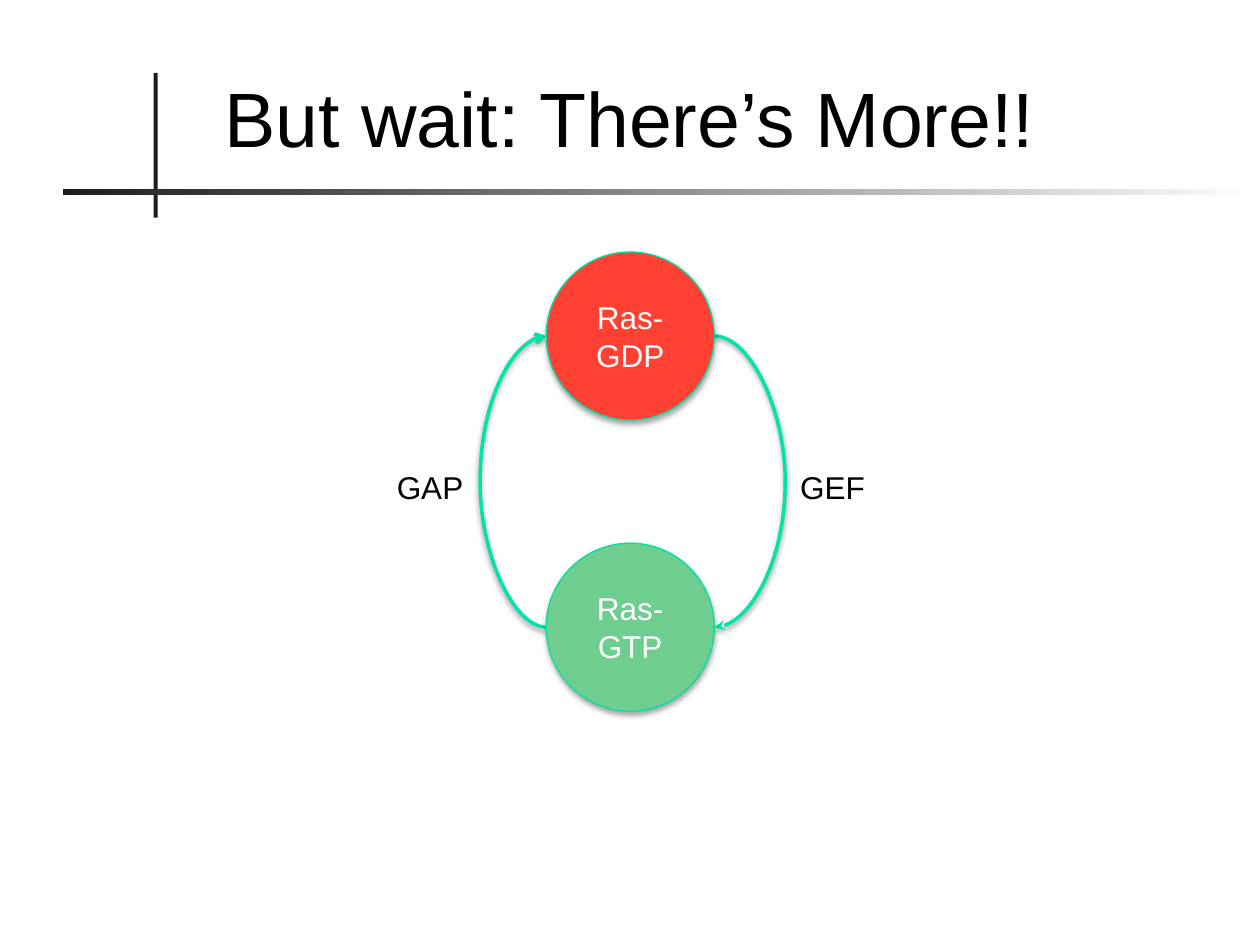
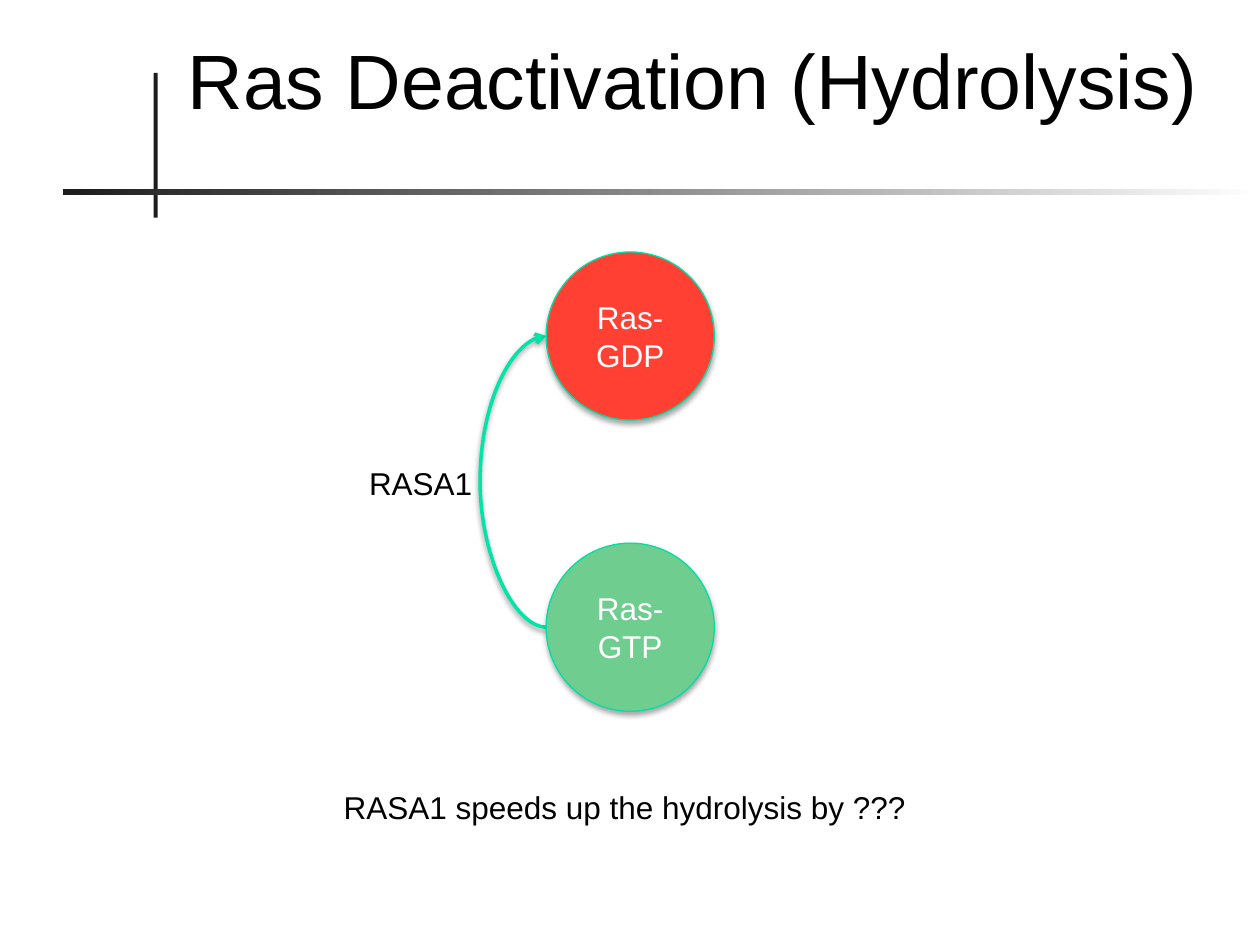
from lxml import etree
from pptx import Presentation
from pptx.dml.color import RGBColor
from pptx.enum.shapes import MSO_CONNECTOR, MSO_SHAPE
from pptx.enum.text import MSO_ANCHOR, PP_ALIGN
from pptx.oxml.ns import qn
from pptx.util import Cm, Pt

CURVE = MSO_CONNECTOR.CURVE
RECTANGLE, OVAL = MSO_SHAPE.RECTANGLE, MSO_SHAPE.OVAL
MIDDLE, TOP = MSO_ANCHOR.MIDDLE, MSO_ANCHOR.TOP
CENTER, LEFT = PP_ALIGN.CENTER, PP_ALIGN.LEFT

THEME = {
    "band": RGBColor.from_string("1C1C1C"),
    "white": RGBColor.from_string("FFFFFF"),
    "black": RGBColor.from_string("000000"),
    "arrow": RGBColor.from_string("00E4A8"),
    "outline": RGBColor.from_string("00DFA4"),
    "inactive": RGBColor.from_string("FF4032"),
    "active": RGBColor.from_string("6ECD8F"),
    "font": "Arial",
    "title_size": Pt(44),
    "body_size": Pt(18),
}

# Format of each kind of text: frame, paragraph, font and colour
TITLE = {"wrap": True, "anchor": MIDDLE, "align": CENTER,
         "size": THEME["title_size"], "color": THEME["black"]}
LABEL = {"wrap": False, "anchor": TOP, "align": LEFT,
         "size": THEME["body_size"], "color": THEME["black"]}
STATE = {"wrap": True, "anchor": MIDDLE, "align": CENTER,
         "size": THEME["body_size"], "color": THEME["white"]}

# Ras cycle geometry in centimetres
DIAMETER = 3.39
CIRCLE_LEFT = 11.01
CIRCLE_RIGHT = CIRCLE_LEFT + DIAMETER
GDP_TOP, GTP_TOP = 5.08, 10.95
GDP_MIDDLE, GTP_MIDDLE = GDP_TOP + DIAMETER / 2, GTP_TOP + DIAMETER / 2
OFFSET = 0.01  # connector width, on which the curve adjustment is based

STATES = [("Ras-GDP", GDP_TOP, THEME["inactive"]),
          ("Ras-GTP", GTP_TOP, THEME["active"])]

# Arrows: start x, start y, end x, end y, bulge, arrowhead
GEF_ARROW = (CIRCLE_RIGHT, GDP_MIDDLE, CIRCLE_RIGHT + OFFSET, GTP_MIDDLE, 1.43, "stealth")
GAP_ARROW = (CIRCLE_LEFT + OFFSET, GTP_MIDDLE, CIRCLE_LEFT, GDP_MIDDLE, 1.34, "arrow")

SLIDES = [
    {"title": ("But wait: There’s More!!", 1.27, 0.76),
     "arrows": [GEF_ARROW, GAP_ARROW],
     "labels": [("GEF", 15.88, 9.32, 1.83), ("GAP", 7.75, 9.32, 1.85)]},
    {"title": ("Ras Deactivation (Hydrolysis)", 2.54, 0),
     "arrows": [GAP_ARROW],
     "labels": [("RASA1", 7.19, 9.22, 2.62),
                ("RASA1 speeds up the hydrolysis by ???", 6.68, 15.77, 11.96)]},
]


def write_text(shape, text, style):
    frame = shape.text_frame
    frame.text = text
    paragraph = frame.paragraphs[0]
    font = paragraph.runs[0].font
    formats = {
        frame: {"word_wrap": style["wrap"], "vertical_anchor": style["anchor"]},
        paragraph: {"alignment": style["align"]},
        font: {"name": THEME["font"], "size": style["size"]},
        font.fill: {},
    }
    for target, values in formats.items():
        for name, value in values.items():
            setattr(target, name, value)
    font.color.rgb = style["color"]


def add_shadow(shape, distance, opacity):
    properties = shape._element.spPr
    for old_effects in properties.findall(qn("a:effectLst")):
        properties.remove(old_effects)
    effects = etree.SubElement(properties, qn("a:effectLst"))
    shadow = etree.SubElement(effects, qn("a:outerShdw"), blurRad=str(Pt(3.1)),
                              dist=str(Pt(distance)), dir="5400000", rotWithShape="0")
    color = etree.SubElement(shadow, qn("a:srgbClr"), val=str(THEME["black"]))
    etree.SubElement(color, qn("a:alpha"), val=str(opacity * 1000))


presentation = Presentation()
presentation.slide_width, presentation.slide_height = Cm(25.4), Cm(19.05)

for content in SLIDES:
    slide = presentation.slides.add_slide(presentation.slide_layouts[6])
    shapes = slide.shapes

    # Crossed title bands
    upright = shapes.add_shape(RECTANGLE, Cm(3.1), Cm(1.47), Cm(0.08), Cm(2.92))
    upright.fill.solid()
    upright.fill.fore_color.rgb = THEME["band"]
    rule = shapes.add_shape(RECTANGLE, Cm(1.27), Cm(3.81), Cm(24.13), Cm(0.13))
    rule.fill.gradient()
    rule.fill.gradient_angle = 0
    for stop, color in zip(rule.fill.gradient_stops, (THEME["band"], THEME["white"])):
        stop.color.rgb = color
    for band in (upright, rule):
        band.line.fill.background()
        band.shadow.inherit = False

    # Title
    text, left, top = content["title"]
    title = shapes.add_textbox(Cm(left), Cm(top), Cm(22.86), Cm(3.18))
    write_text(title, text, TITLE)

    # Curved arrows between the two states
    for start_x, start_y, end_x, end_y, bulge, head in content["arrows"]:
        arrow = shapes.add_connector(CURVE, Cm(start_x), Cm(start_y), Cm(end_x), Cm(end_y))
        arrow.line.color.rgb = THEME["arrow"]
        arrow.line.width = Pt(2)
        etree.SubElement(arrow.line._get_or_add_ln(), qn("a:tailEnd"), type=head)
        adjustments = arrow._element.spPr.find(qn("a:prstGeom")).find(qn("a:avLst"))
        etree.SubElement(adjustments, qn("a:gd"), name="adj1",
                         fmla=f"val {round(bulge / OFFSET * 100000)}")
        add_shadow(arrow, 1.6, 38)

    # Ras states
    for name, top, color in STATES:
        circle = shapes.add_shape(OVAL, Cm(CIRCLE_LEFT), Cm(top), Cm(DIAMETER), Cm(DIAMETER))
        circle.fill.solid()
        circle.fill.fore_color.rgb = color
        circle.line.color.rgb = THEME["outline"]
        circle.line.width = Pt(0.75)
        add_shadow(circle, 1.8, 35)
        write_text(circle, name, STATE)

    # Labels
    for text, left, top, width in content["labels"]:
        label = shapes.add_textbox(Cm(left), Cm(top), Cm(width), Cm(1.02))
        write_text(label, text, LABEL)

presentation.save("out.pptx")
